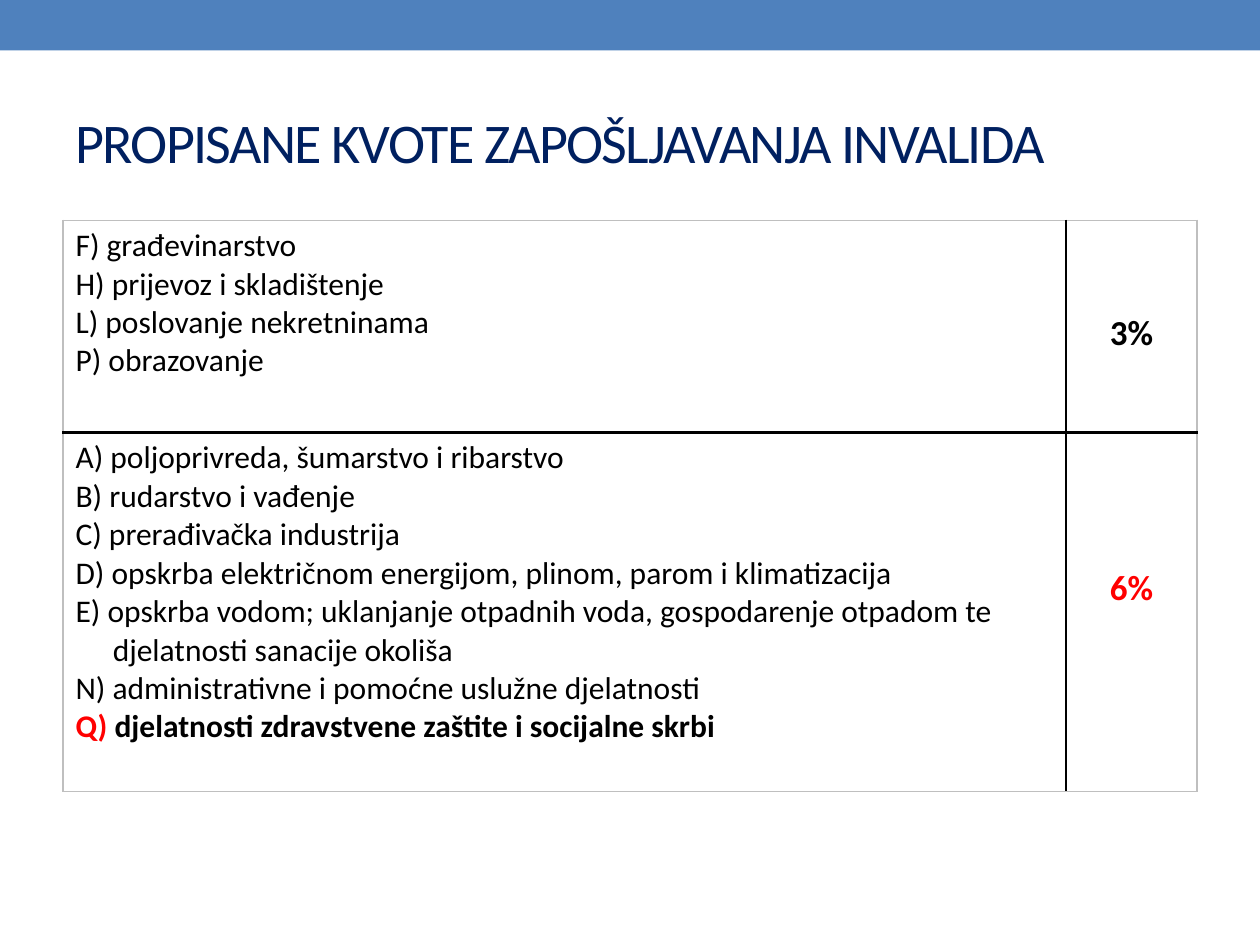
"""Build the slide on prescribed employment quotas."""
import dataclasses

import lxml.etree
import pptx
import pptx.dml.color
import pptx.enum.shapes
import pptx.enum.text
import pptx.oxml.ns
import pptx.util

Cm = pptx.util.Cm
Pt = pptx.util.Pt
FONT = "Calibri"
BLACK, RED, GREY = "000000", "FF0000", "BFBFBF"


@dataclasses.dataclass
class Quota:
    items: list[str]
    share: str
    tint: str
    height: float
    drop: float


QUOTAS = [
    Quota(["F) građevinarstvo", "H) prijevoz i skladištenje",
           "L) poslovanje nekretninama", "P) obrazovanje"],
          "3%", BLACK, 4.28, 1.85),
    Quota(["A) poljoprivreda, šumarstvo i ribarstvo",
           "B) rudarstvo i vađenje",
           "C) prerađivačka industrija",
           "D) opskrba električnom energijom, plinom, parom i klimatizacija",
           "E) opskrba vodom; uklanjanje otpadnih voda, gospodarenje otpadom te "
           "djelatnosti sanacije okoliša",
           "N) administrativne i pomoćne uslužne djelatnosti",
           "Q) djelatnosti zdravstvene zaštite i socijalne skrbi"],
          "6%", RED, 7.24, 2.71),
]


def color(code: str) -> pptx.dml.color.RGBColor:
    return pptx.dml.color.RGBColor.from_string(code)


def style(font, size: float, tint: str, bold: bool = False) -> None:
    font.name, font.size, font.bold = FONT, Pt(size), bold
    font.color.rgb = color(tint)


def edge(cell, side: str, tint: str, width: float) -> None:
    qn = pptx.oxml.ns.qn
    props = cell._tc.get_or_add_tcPr()
    line = lxml.etree.SubElement(props, qn(f"a:ln{side}"), w=str(Pt(width)))
    fill = lxml.etree.SubElement(line, qn("a:solidFill"))
    lxml.etree.SubElement(fill, qn("a:srgbClr"), val=tint)


def frame(cell, row: int, col: int) -> None:
    outer, wall, floor = (GREY, 1), (BLACK, 1), (BLACK, 1.5)
    edge(cell, "L", *(wall if col else outer))
    edge(cell, "R", *(outer if col else wall))
    edge(cell, "T", *(floor if row else outer))
    edge(cell, "B", *(outer if row else floor))
    cell.fill.background()


def write_list(cell, items: list[str]) -> None:
    text = cell.text_frame
    for index, item in enumerate(items):
        para = text.paragraphs[0] if index == 0 else text.add_paragraph()
        if item.startswith("E)"):
            props = para._p.get_or_add_pPr()
            props.set("marL", str(Cm(0.75)))
            props.set("indent", str(Cm(-0.75)))
        if item.startswith("Q)"):
            for part, tint in ((item[:3], RED), (item[3:], BLACK)):
                run = para.add_run()
                run.text = part
                style(run.font, 18, tint, True)
        else:
            para.text = item
            style(para.font, 18, BLACK)


def write_share(cell, quota: Quota) -> None:
    cell.margin_top = Cm(quota.drop)
    para = cell.text_frame.paragraphs[0]
    para.text = quota.share
    para.alignment = pptx.enum.text.PP_ALIGN.CENTER
    style(para.font, 20, quota.tint, True)


def add_bar(slide, width: int) -> None:
    kind = pptx.enum.shapes.MSO_SHAPE.RECTANGLE
    bar = slide.shapes.add_shape(kind, 0, 0, width, Cm(1.02))
    bar.shadow.inherit = False
    bar.fill.solid()
    bar.fill.fore_color.rgb = color("4F81BD")
    bar.line.fill.background()


def add_title(slide) -> None:
    title = slide.shapes.title
    title.left, title.top = Cm(1.27), Cm(1.47)
    title.width, title.height = Cm(22.86), Cm(2.74)
    text = title.text_frame
    text.vertical_anchor = pptx.enum.text.MSO_ANCHOR.MIDDLE
    para = text.paragraphs[0]
    para.alignment = pptx.enum.text.PP_ALIGN.LEFT
    run = para.add_run()
    run.text = "PROPISANE KVOTE ZAPOŠLJAVANJA INVALIDA"
    style(para.font, 32, "002060")
    run._r.get_or_add_rPr().set("spc", "-100")


def add_quotas(slide) -> None:
    high = sum(quota.height for quota in QUOTAS)
    table = slide.shapes.add_table(
        len(QUOTAS), 2, Cm(1.27), Cm(4.44), Cm(22.86), Cm(high)).table
    table.first_row = table.horz_banding = False
    for column, width in zip(table.columns, (20.22, 2.64)):
        column.width = Cm(width)
    for row, quota in enumerate(QUOTAS):
        table.rows[row].height = Cm(quota.height)
        for col in range(2):
            frame(table.cell(row, col), row, col)
        write_list(table.cell(row, 0), quota.items)
        write_share(table.cell(row, 1), quota)


def main() -> None:
    deck = pptx.Presentation()
    deck.slide_width, deck.slide_height = Cm(25.4), Cm(19.05)
    slide = deck.slides.add_slide(deck.slide_layouts[5])
    add_bar(slide, deck.slide_width)
    add_title(slide)
    add_quotas(slide)
    deck.save("out.pptx")


if __name__ == "__main__":
    main()
